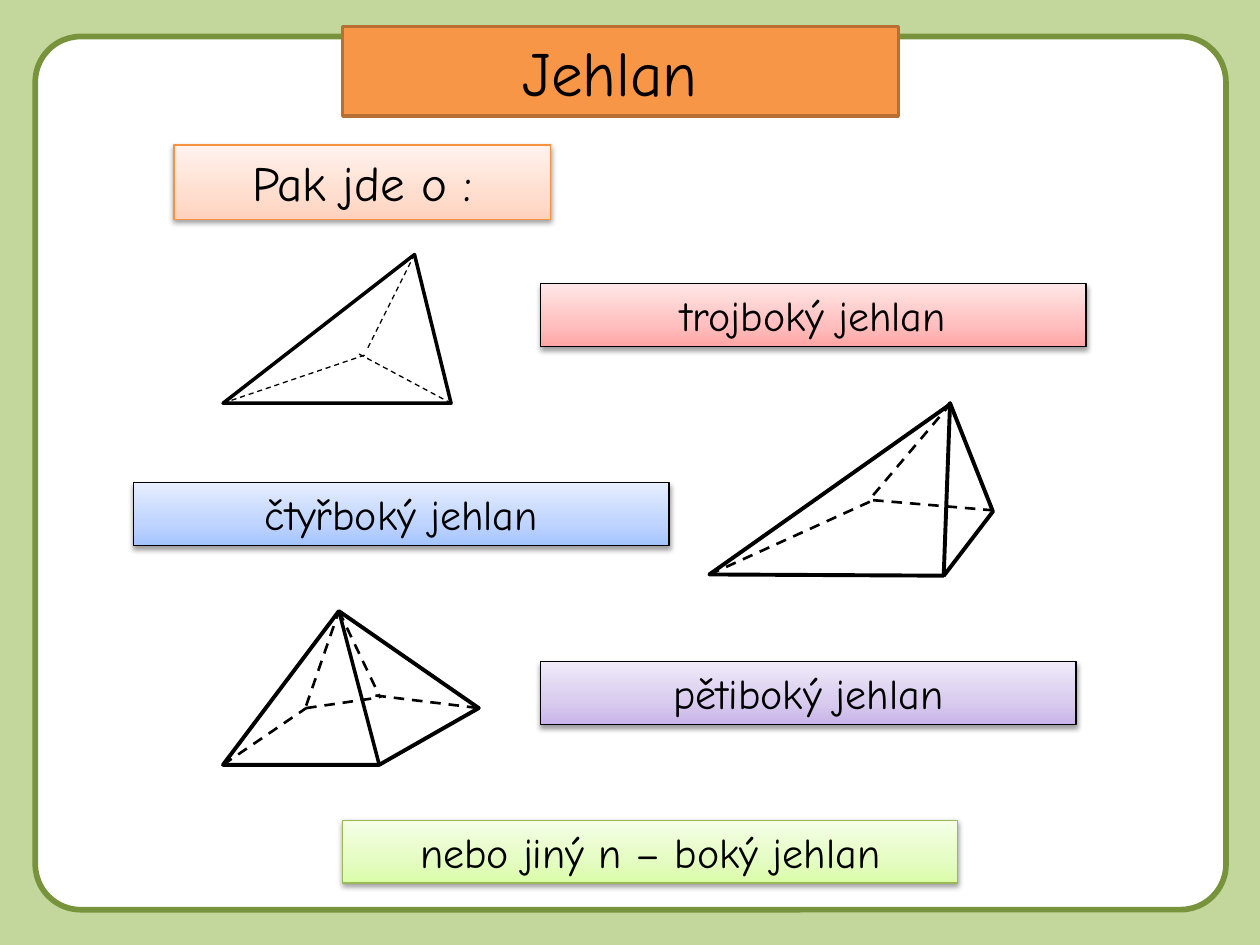
from lxml import etree
from pptx import Presentation
from pptx.dml.color import RGBColor
from pptx.enum import dml, shapes, text
from pptx.oxml.ns import qn
from pptx.util import Inches, Pt

BLACK = RGBColor(0, 0, 0)
WHITE = RGBColor(0xFF, 0xFF, 0xFF)
PALE_GREEN = RGBColor(0xC3, 0xD6, 0x9B)
DARK_GREEN = RGBColor(0x77, 0x93, 0x3C)
LIME = RGBColor(0x98, 0xB9, 0x55)
ORANGE = RGBColor(0xF7, 0x96, 0x46)
BRIGHT_ORANGE = RGBColor(0xF6, 0x92, 0x40)
BROWN = RGBColor(0xB7, 0x6F, 0x34)
PEACH_STOPS = RGBColor(0xFF, 0xD2, 0xBD), RGBColor(0xFF, 0xDE, 0xD0), RGBColor(0xFF, 0xF2, 0xED)
RED_STOPS = RGBColor(0xFF, 0xA6, 0xA5), RGBColor(0xFF, 0xC0, 0xBF), RGBColor(0xFF, 0xE7, 0xE7)
BLUE_STOPS = RGBColor(0xA4, 0xC4, 0xFF), RGBColor(0xBF, 0xD4, 0xFF), RGBColor(0xE6, 0xEE, 0xFF)
PURPLE_STOPS = RGBColor(0xC9, 0xB5, 0xE8), RGBColor(0xD8, 0xCB, 0xEE), RGBColor(0xF0, 0xEA, 0xF9)
GREEN_STOPS = RGBColor(0xDA, 0xFD, 0xA7), RGBColor(0xE4, 0xFC, 0xC2), RGBColor(0xF5, 0xFF, 0xE7)


def add_box(kind, box, fill, line, width, label="", size=24):
    sp = s.shapes.add_shape(kind, *[Inches(v) for v in box])
    sp.shadow.inherit = False
    sp.fill.solid()
    sp.fill.fore_color.rgb = fill
    sp.line.color.rgb = line
    sp.line.width = Pt(width)
    tf = sp.text_frame
    tf.word_wrap = True
    tf.vertical_anchor = text.MSO_ANCHOR.MIDDLE
    p = tf.paragraphs[0]
    p.text = label
    p.alignment = text.PP_ALIGN.CENTER
    for r in p.runs:
        r.font.name = "Comic Neue"
        r.font.size = Pt(size)
        r.font.color.rgb = BLACK
    return sp


def add_shade(sp, stops):
    """Give a box an upward three-stop gradient and a soft shadow below it."""
    sp.fill.gradient()
    sp.fill.gradient_angle = 90
    gs_list = sp._element.spPr.find(".//" + qn("a:gsLst"))
    gs_list.clear()
    for position, color in zip((0, 35, 100), stops):
        gs = etree.SubElement(gs_list, qn("a:gs"), pos=str(position * 1000))
        etree.SubElement(gs, qn("a:srgbClr"), val=str(color))
    effects = sp._element.spPr.find(qn("a:effectLst"))
    shadow = etree.SubElement(effects, qn("a:outerShdw"), blurRad=str(Pt(3.1)),
                              dist=str(Pt(1.6)), dir="5400000", rotWithShape="0")
    color = etree.SubElement(shadow, qn("a:srgbClr"), val=str(BLACK))
    etree.SubElement(color, qn("a:alpha"), val="38000")


prs = Presentation()
prs.slide_width, prs.slide_height = Inches(10), Inches(7.5)
s = prs.slides.add_slide(prs.slide_layouts[6])
s.background.fill.solid()
s.background.fill.fore_color.rgb = PALE_GREEN

RECT = shapes.MSO_SHAPE.RECTANGLE
frame = add_box(shapes.MSO_SHAPE.ROUNDED_RECTANGLE, (0.28, 0.29, 9.45, 6.93),
                WHITE, DARK_GREEN, 3.25)
frame.adjustments[0] = 0.052
add_box(RECT, (2.72, 0.21, 4.41, 0.71), ORANGE, BROWN, 2, "Jehlan ", 36)

labels = [
    ("Pak jde o :", (1.38, 1.15, 2.99, 0.59), PEACH_STOPS, BRIGHT_ORANGE, 28),
    ("trojboký jehlan", (4.29, 2.25, 4.33, 0.5), RED_STOPS, BLACK, 24),
    ("čtyřboký jehlan", (1.06, 3.83, 4.25, 0.5), BLUE_STOPS, BLACK, 24),
    ("pětiboký jehlan", (4.29, 5.25, 4.25, 0.5), PURPLE_STOPS, BLACK, 24),
    ("nebo jiný n – boký jehlan", (2.72, 6.51, 4.88, 0.5), GREEN_STOPS, LIME, 24),
]
for label, box, stops, line, size in labels:
    add_shade(add_box(RECT, box, stops[1], line, 0.75, label, size), stops)

# Each pyramid: outlines (points, closed), outline width, hidden edges, hidden width, front edges
pyramids = [
    ([([(1.77, 3.2), (3.58, 3.2), (3.29, 2.02)], True)], 2,
     [(1.77, 3.2, 2.92, 2.81), (2.92, 2.76, 3.29, 2.02), (2.85, 2.81, 3.58, 3.2)], 0.75, []),
    ([([(5.63, 4.56), (7.49, 4.57), (7.54, 3.21)], True),
      ([(7.49, 4.57), (7.88, 4.06), (7.54, 3.2), (7.52, 3.23)], False)], 2.25,
     [(5.63, 4.56, 6.93, 3.97), (6.93, 3.97, 7.88, 4.05), (6.93, 3.93, 7.54, 3.21)], 1.5, []),
    ([([(1.77, 6.07), (3.01, 6.07), (3.8, 5.62), (2.69, 4.85)], True)], 2.25,
     [(2.69, 4.85, 3.02, 5.54), (1.77, 6.07, 2.43, 5.62), (2.98, 5.52, 3.8, 5.62),
      (2.43, 5.62, 2.98, 5.54), (2.43, 5.6, 2.69, 4.85)], 1.5,
     [(3.01, 6.07, 2.69, 4.85)]),
]
for outlines, outline_width, hidden, hidden_width, front in pyramids:
    pyramid = s.shapes.add_group_shape().shapes
    for points, closed in outlines:
        corners = [(Inches(x), Inches(y)) for x, y in points]
        builder = pyramid.build_freeform(*corners[0])
        builder.add_line_segments(corners[1:], close=closed)
        sp = builder.convert_to_shape()
        sp.shadow.inherit = False
        sp.fill.background()
        sp.line.color.rgb = BLACK
        sp.line.width = Pt(outline_width)
    for edge in hidden + front:
        cx = pyramid.add_connector(shapes.MSO_CONNECTOR.STRAIGHT, *[Inches(v) for v in edge])
        cx.line.color.rgb = BLACK
        cx.line.width = Pt(2 if edge in front else hidden_width)
        if edge in hidden:
            cx.line.dash_style = dml.MSO_LINE.DASH
        etree.SubElement(cx._element.spPr, qn("a:effectLst"))

prs.save("out.pptx")
